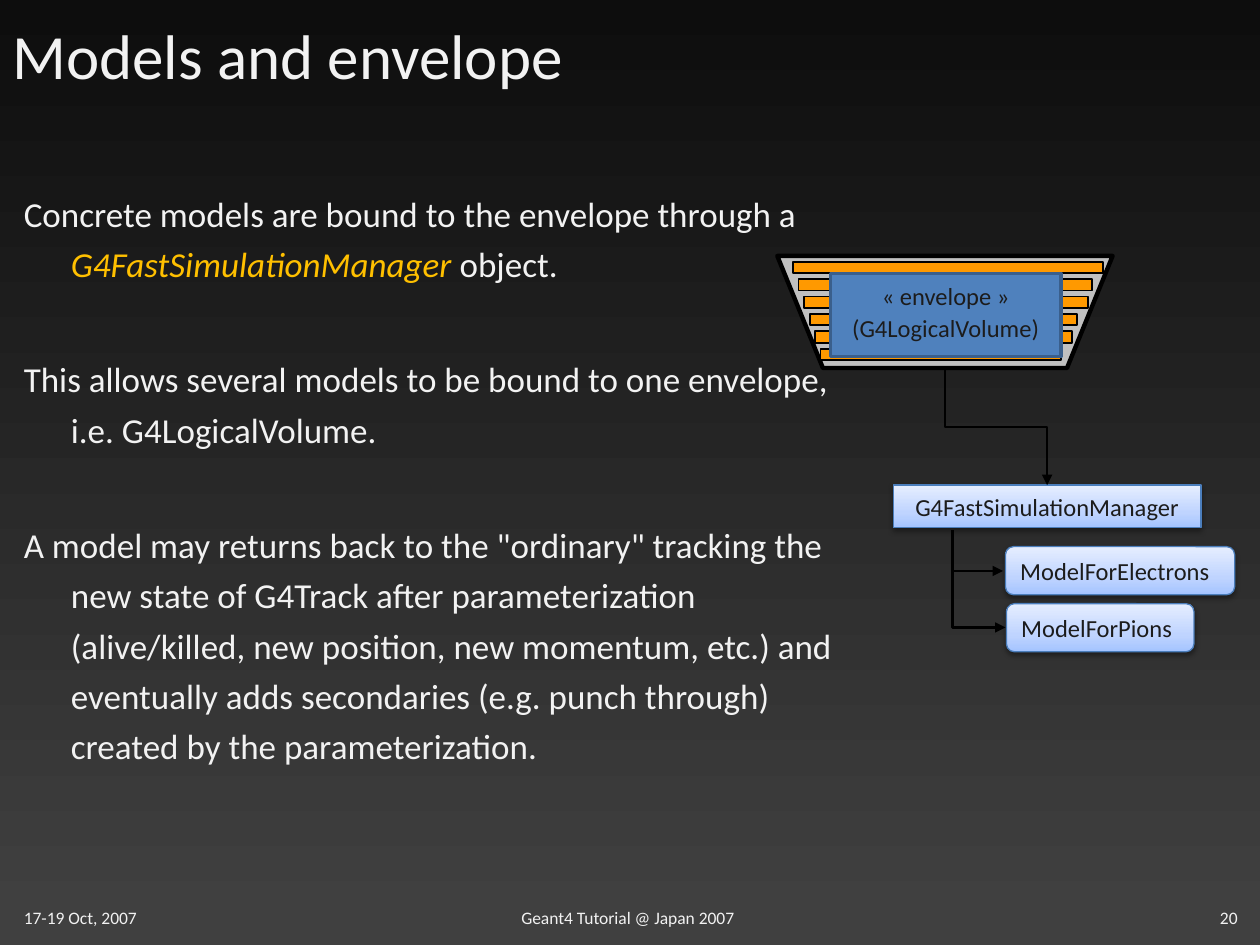
from dataclasses import dataclass
from typing import NamedTuple

from lxml.etree import SubElement
from pptx import Presentation
from pptx.dml.color import RGBColor
from pptx.enum.shapes import MSO_CONNECTOR as Link, MSO_SHAPE as Preset
from pptx.enum.text import MSO_ANCHOR as Anchor, MSO_AUTO_SIZE as AutoSize, PP_ALIGN as Align
from pptx.oxml.ns import qn
from pptx.util import Cm, Pt


@dataclass(frozen=True)
class Theme:
    font: str = "Calibri"
    light: str = "F2F2F2"
    dark: str = "1C1C1C"
    accent: str = "FFC000"
    black: str = "000000"
    backdrop: tuple = ((3, "404040"), (100, "0D0D0D"))
    card: tuple = ((0, "A4C4FF"), (35, "BFD4FF"), (100, "E6EEFF"))
    card_line: str = "4B7EBC"
    bar: str = "FF9900"
    detector: str = "C0C0C0"
    envelope: str = "4F81BD"
    envelope_line: str = "3A5F8C"
    title_size: int = 36
    body_size: int = 20
    label_size: int = 14
    footer_size: int = 10


THEME = Theme()


class Box(NamedTuple):
    left: float
    top: float
    width: float
    height: float

    def lengths(self) -> tuple:
        return tuple(Cm(value) for value in self)


class Card(NamedTuple):
    text: str
    box: Box
    preset: Preset
    align: Align


class Arrow(NamedTuple):
    start: tuple
    end: tuple
    preset: str


class Footer(NamedTuple):
    text: str
    box: Box
    align: Align
    wrap: bool


CARDS = (
    Card("G4FastSimulationManager", Box(18.01, 9.78, 6.2, 0.86), Preset.RECTANGLE, Align.CENTER),
    Card("ModelForElectrons", Box(20.27, 11.02, 4.62, 0.97), Preset.ROUNDED_RECTANGLE, Align.LEFT),
    Card("ModelForPions", Box(20.29, 12.17, 3.78, 0.97), Preset.ROUNDED_RECTANGLE, Align.LEFT),
)
ARROWS = (
    Arrow((19.05, 7.44), (21.11, 9.78), "bentConnector3"),
    Arrow((19.2, 10.69), (20.22, 11.51), "bentConnector2"),
    Arrow((19.2, 10.69), (20.27, 12.65), "bentConnector2"),
)
FOOTERS = (
    Footer("17-19 Oct, 2007", Box(0.23, 18.16, 2.84, 0.69), Align.LEFT, False),
    Footer("Geant4 Tutorial @ Japan 2007", Box(10.26, 18.16, 4.9, 0.69), Align.LEFT, False),
    Footer("20", Box(23.29, 18.16, 1.91, 0.89), Align.RIGHT, True),
)
# Each paragraph is a list of (text, highlighted) spans
BODY = (
    (("Concrete models are bound to the envelope through a ", False),
     ("G4FastSimulationManager ", True), ("object.", False)),
    (("This allows several models to be bound to one envelope, i.e. G4LogicalVolume.", False),),
    (('A model may returns back to the "ordinary" tracking the new state of G4Track after '
      "parameterization (alive/killed, new position, new momentum, etc.) and eventually adds "
      "secondaries (e.g. punch through) created by the parameterization.", False),),
)
OUTLINE = ((15.67, 5.16), (16.59, 7.42), (21.51, 7.42), (22.43, 5.16))
BARS = ((15.98, 6.25), (16.1, 5.92), (16.21, 5.72), (16.33, 5.38), (16.43, 5.18), (16.54, 4.85))
BAR_TOP, BAR_STEP, BAR_HEIGHT = 5.28, 0.35, 0.23


def add_text(para, text: str, *, size: int, color: str, italic: bool = False,
             align: Align = Align.LEFT) -> None:
    para.alignment = align
    span = para.add_run()
    span.text = text
    span.font.name = THEME.font
    span.font.size = Pt(size)
    span.font.italic = italic
    span.font.color.rgb = RGBColor.from_string(color)


def set_frame(frame, *, wrap: bool, anchor: Anchor = Anchor.TOP) -> None:
    frame.auto_size = AutoSize.NONE
    frame.word_wrap = wrap
    frame.vertical_anchor = anchor


def set_gradient(fill, stops: tuple) -> None:
    """Fill from bottom to top with any number of stops."""
    fill.gradient()
    fill.gradient_angle = 90
    stop_list = fill.gradient_stops[0]._gs.getparent()
    for old in list(stop_list):
        stop_list.remove(old)
    for position, color in stops:
        stop = SubElement(stop_list, qn("a:gs"), pos=str(position * 1000))
        SubElement(stop, qn("a:srgbClr"), val=color)


def set_line(line, color: str, width: float) -> None:
    line.color.rgb = RGBColor.from_string(color)
    line.width = Pt(width)


def paint(shape, fill: str, line: str, width: float) -> None:
    shape.shadow.inherit = False
    shape.fill.solid()
    shape.fill.fore_color.rgb = RGBColor.from_string(fill)
    set_line(shape.line, line, width)


def add_card(shapes, card: Card) -> None:
    shape = shapes.add_shape(card.preset, *card.box.lengths())
    shape.shadow.inherit = False
    set_gradient(shape.fill, THEME.card)
    set_line(shape.line, THEME.card_line, 0.75)
    effects = shape._element.spPr.find(qn("a:effectLst"))
    shadow = SubElement(effects, qn("a:outerShdw"), blurRad=str(Pt(3.1)), dist=str(Pt(1.6)),
                        dir="5400000", rotWithShape="0")
    color = SubElement(shadow, qn("a:srgbClr"), val=THEME.black)
    SubElement(color, qn("a:alpha"), val="38000")
    set_frame(shape.text_frame, wrap=False, anchor=Anchor.MIDDLE)
    add_text(shape.text_frame.paragraphs[0], card.text, size=THEME.label_size,
             color=THEME.dark, align=card.align)


def add_arrow(shapes, arrow: Arrow) -> None:
    """Elbow that leaves downwards: a mirrored elbow turned by 270 degrees."""
    (x1, y1), (x2, y2) = arrow.start, arrow.end
    middle_x, middle_y = (x1 + x2) / 2, (y1 + y2) / 2
    half_width, half_height = (y2 - y1) / 2, (x2 - x1) / 2
    link = shapes.add_connector(
        Link.ELBOW, Cm(middle_x + half_width), Cm(middle_y - half_height),
        Cm(middle_x - half_width), Cm(middle_y + half_height))
    properties = link._element.spPr
    properties.find(qn("a:xfrm")).set("rot", str(270 * 60000))
    properties.find(qn("a:prstGeom")).set("prst", arrow.preset)
    set_line(link.line, THEME.black, 1.5)
    SubElement(properties.find(qn("a:ln")), qn("a:tailEnd"), type="triangle")
    SubElement(properties, qn("a:effectLst"))


def add_detector(shapes) -> None:
    # Trapezoid with its layers
    start, *corners = [(Cm(x), Cm(y)) for x, y in OUTLINE]
    builder = shapes.build_freeform(*start)
    builder.add_line_segments(corners, close=True)
    paint(builder.convert_to_shape(), THEME.detector, THEME.black, 2.5)
    for row, (left, width) in reversed(list(enumerate(BARS))):
        box = Box(left, BAR_TOP + row * BAR_STEP, width, BAR_HEIGHT)
        bar = shapes.add_shape(Preset.RECTANGLE, *box.lengths())
        paint(bar, THEME.bar, THEME.black, 1)
    # Envelope label
    label = shapes.add_shape(Preset.RECTANGLE, *Box(16.74, 5.51, 4.65, 1.68).lengths())
    paint(label, THEME.envelope, THEME.envelope_line, 2)
    frame = label.text_frame
    set_frame(frame, wrap=False)
    frame.margin_top = frame.margin_bottom = Cm(0.23)
    for index, text in enumerate(("« envelope »", "(G4LogicalVolume)")):
        para = frame.add_paragraph() if index else frame.paragraphs[0]
        para.line_spacing = 0.9
        para.space_before = Pt(2.8 if index else 0)
        add_text(para, text, size=THEME.label_size, color=THEME.dark, align=Align.CENTER)


def add_body(shapes) -> None:
    frame = shapes.add_textbox(*Box(0.23, 3.58, 16.84, 13.69).lengths()).text_frame
    set_frame(frame, wrap=True)
    for index, spans in enumerate(BODY):
        para = frame.add_paragraph() if index else frame.paragraphs[0]
        para.line_spacing = 1.2
        para.space_before = Pt(37 if index else 0)
        indent = para._p.get_or_add_pPr()
        indent.set("marL", str(Cm(0.95)))
        indent.set("indent", str(-Cm(0.95)))
        for text, marked in spans:
            add_text(para, text, size=THEME.body_size, italic=marked,
                     color=THEME.accent if marked else THEME.light)


def main() -> None:
    deck = Presentation()
    deck.slide_width, deck.slide_height = Cm(25.4), Cm(19.05)
    page = deck.slides.add_slide(deck.slide_layouts[5])
    set_gradient(page.background.fill, THEME.backdrop)
    # Footer line
    for footer in FOOTERS:
        frame = page.shapes.add_textbox(*footer.box.lengths()).text_frame
        set_frame(frame, wrap=footer.wrap)
        add_text(frame.paragraphs[0], footer.text, size=THEME.footer_size,
                 color=THEME.light, align=footer.align)
    # Title and text
    title = page.shapes.title
    title.left, title.top, title.width, title.height = Box(0, 0.2, 25.4, 1.8).lengths()
    set_frame(title.text_frame, wrap=True, anchor=Anchor.MIDDLE)
    add_text(title.text_frame.paragraphs[0], "Models and envelope",
             size=THEME.title_size, color=THEME.light)
    add_body(page.shapes)
    # Diagram
    for card in CARDS:
        add_card(page.shapes, card)
    for arrow in ARROWS:
        add_arrow(page.shapes, arrow)
    add_detector(page.shapes.add_group_shape().shapes)
    deck.save("out.pptx")


if __name__ == "__main__":
    main()
